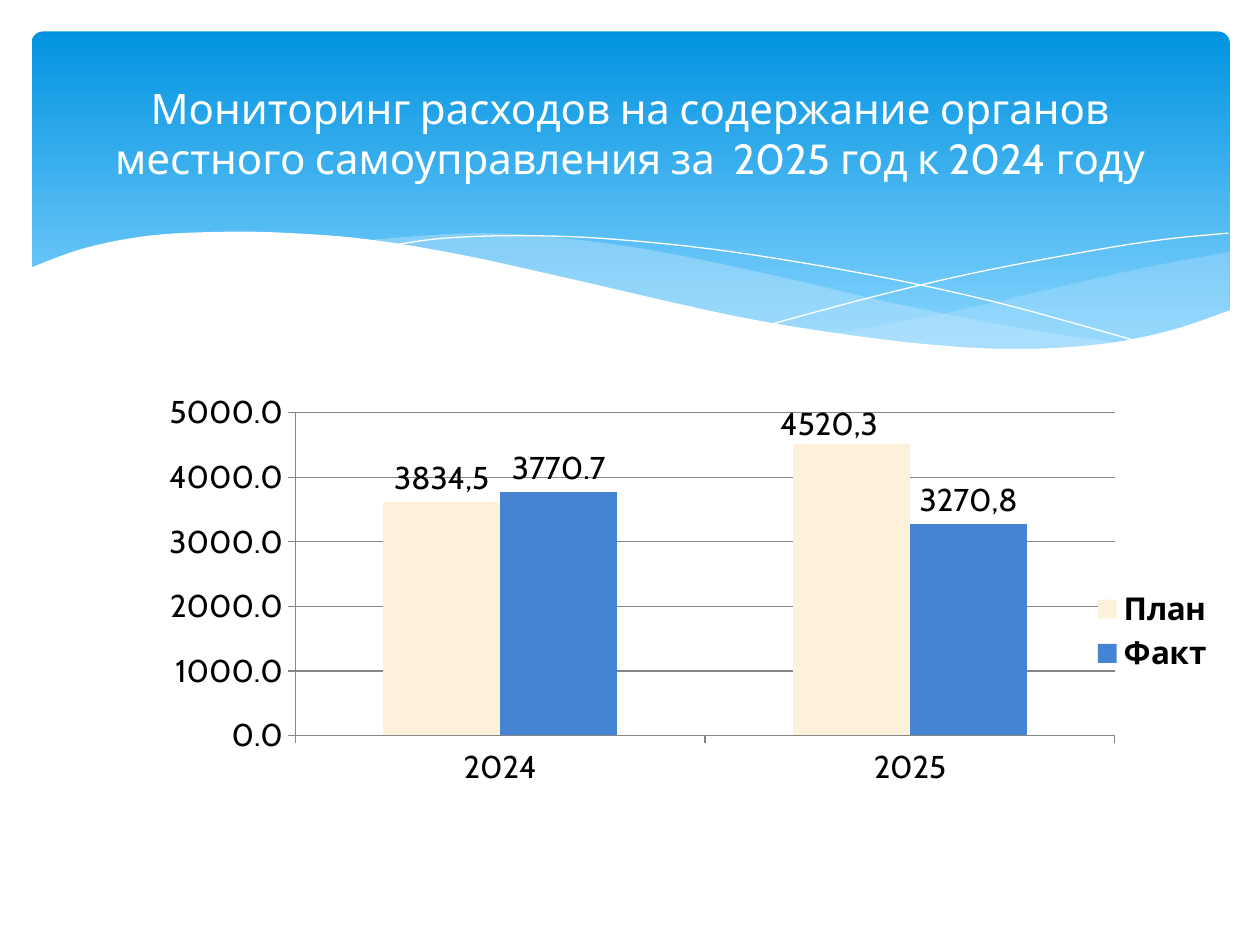
from dataclasses import dataclass

from pptx import Presentation
from pptx.chart.data import CategoryChartData
from pptx.dml.color import RGBColor
from pptx.enum.chart import (XL_CHART_TYPE, XL_LABEL_POSITION,
                             XL_LEGEND_POSITION, XL_TICK_MARK)
from pptx.enum.shapes import MSO_SHAPE
from pptx.enum.text import MSO_ANCHOR, PP_ALIGN
from pptx.oxml import parse_xml
from pptx.oxml.ns import nsdecls, qn
from pptx.util import Inches, Pt

COLUMN = XL_CHART_TYPE.COLUMN_CLUSTERED
RIGHT = XL_LEGEND_POSITION.RIGHT
ABOVE = XL_LABEL_POSITION.OUTSIDE_END
OUTSIDE = XL_TICK_MARK.OUTSIDE
NONE = XL_TICK_MARK.NONE
ROUND = MSO_SHAPE.ROUNDED_RECTANGLE
MIDDLE = MSO_ANCHOR.MIDDLE
CENTER = PP_ALIGN.CENTER


@dataclass
class Theme:
    font: str = "Cabin"
    white: str = "FFFFFF"
    black: str = "000000"
    sky: str = "0293E0"
    pale: str = "83D3FE"
    mist: str = "C6E7FC"
    plan: str = "FDF2D9"
    fact: str = "4584D3"
    grid: str = "868686"
    title: int = 24
    label: int = 18


def rgb(code):
    return RGBColor.from_string(code)


def style(font, name, size, color, bold=False):
    font.name, font.size, font.bold = name, Pt(size), bold
    font.color.rgb = rgb(color)


def write(frame, text, align=None, **form):
    frame.text = text
    line = frame.paragraphs[0]
    line.alignment = align
    style(line.runs[0].font, **form)


def smooth(knots, steps=6):
    """Catmull-Rom curve through the knots."""
    ends = [knots[0], *knots, knots[-1]]
    points = [knots[0]]
    for a, b, c, d in zip(ends, ends[1:], ends[2:], ends[3:]):
        for step in range(1, steps + 1):
            t = step / steps
            points.append(tuple(
                (2 * q + (r - p) * t + (2 * p - 5 * q + 4 * r - s) * t ** 2
                 + (3 * q - p - 3 * r + s) * t ** 3) / 2
                for p, q, r, s in zip(a, b, c, d)))
    return points


def layout(x, y, w=None, h=None):
    """Manual layout: an inner plot area, or an offset when no size is given."""
    parts = [("x", x), ("y", y)]
    if w:
        parts = [("layoutTarget", "inner"), ("xMode", "edge"),
                 ("yMode", "edge"), *parts, ("w", w), ("h", h)]
    body = "".join(f'<c:{tag} val="{val}"/>' for tag, val in parts)
    return parse_xml(f'<c:layout {nsdecls("c")}><c:manualLayout>{body}'
                     '</c:manualLayout></c:layout>')


class Deck:
    def __init__(self, theme):
        self.theme = theme
        self.file = Presentation()
        self.file.slide_width, self.file.slide_height = Inches(10), Inches(7.5)
        self.slide = self.file.slides.add_slide(self.file.slide_layouts[6])
        self.shapes = self.slide.shapes

    def panel(self, x, y, w, h, top, base):
        box = self.shapes.add_shape(
            ROUND, Inches(x), Inches(y), Inches(w), Inches(h))
        box.adjustments[0] = 0.034
        box.shadow.inherit = False
        box.line.fill.background()
        box.fill.gradient()
        box.fill.gradient_angle = 270
        for stop, code, place in zip(box.fill.gradient_stops,
                                     (top, base), (0, 0.9)):
            stop.color.rgb, stop.position = rgb(code), place

    def wave(self, *edges, fill=None, alpha=100):
        """Filled area between edges, or a hairline when fill is None."""
        points = [(Inches(x), Inches(y))
                  for edge in edges for x, y in smooth(edge)]
        path = self.shapes.build_freeform(*points[0])
        path.add_line_segments(points[1:], close=fill is not None)
        form = path.convert_to_shape()
        form.shadow.inherit = False
        if fill is None:
            form.fill.background()
            form.line.color.rgb, form.line.width = rgb(self.theme.white), Pt(0)
            return
        form.line.fill.background()
        form.fill.solid()
        form.fill.fore_color.rgb = rgb(fill)
        if alpha < 100:
            tint = form.fill._xPr.find(qn("a:solidFill"))[0]
            tint.append(parse_xml(
                f'<a:alpha {nsdecls("a")} val="{alpha * 1000}"/>'))

    def title(self, text, x, y, w, h):
        frame = self.shapes.add_textbox(
            Inches(x), Inches(y), Inches(w), Inches(h)).text_frame
        frame.word_wrap = True
        frame.vertical_anchor = MIDDLE
        write(frame, text, align=CENTER, name=self.theme.font,
              size=self.theme.title, color=self.theme.white)

    def chart(self, cats, rows, x, y, w, h, plot):
        theme = self.theme
        form = dict(name=theme.font, size=theme.label, color=theme.black)
        data = CategoryChartData(number_format="0.0")
        data.categories = cats
        for name, vals, *_ in rows:
            data.add_series(name, vals)
        chart = self.shapes.add_chart(
            COLUMN, Inches(x), Inches(y), Inches(w), Inches(h), data).chart
        style(chart.font, **form)
        chart.has_title = False
        chart.has_legend = True
        chart.legend.position = RIGHT
        chart.legend.include_in_layout = False
        style(chart.legend.font, bold=True, **form)

        # Axes and plot area
        for axis in (chart.category_axis, chart.value_axis):
            axis.major_tick_mark, axis.minor_tick_mark = OUTSIDE, NONE
            axis.format.line.color.rgb = rgb(theme.grid)
        scale = chart.value_axis
        scale.minimum_scale, scale.maximum_scale = 0, 5000
        scale.major_unit = 1000
        scale.tick_labels.number_format = "0.0"
        scale.tick_labels.number_format_is_linked = False
        scale.has_major_gridlines = True
        scale.major_gridlines.format.line.color.rgb = rgb(theme.grid)
        area = chart.plots[0]
        area.gap_width, area.overlap = 150, 0
        area.vary_by_categories = False
        space = chart.element.find(".//" + qn("c:plotArea"))
        for old in space.findall(qn("c:layout")):
            space.remove(old)
        space.insert(0, layout(*plot))

        # Bars and their labels
        for bars, (_, _, color, notes) in zip(area.series, rows):
            bars.format.fill.solid()
            bars.format.fill.fore_color.rgb = rgb(color)
            labels = bars.data_labels
            labels.show_value, labels.position = True, ABOVE
            labels.number_format = "0.0"
            labels.number_format_is_linked = False
            style(labels.font, **form)
            for spot, (text, shift) in notes.items():
                note = bars.points[spot].data_label
                write(note.text_frame, text, **form)
                note.position = ABOVE
                if shift:
                    mark = labels._element.find(qn("c:dLbl") + "[last()]")
                    mark.find(qn("c:idx")).addnext(layout(*shift))

    def save(self):
        self.file.save("out.pptx")


def main():
    theme = Theme()
    deck = Deck(theme)

    # Header with waves
    deck.panel(0.25, 0.25, 9.51, 2.7, theme.sky, theme.pale)
    deck.wave([(9.76, 2), (9.21, 2.1), (8.61, 2.23), (7.53, 2.48), (6.61, 2.65)],
              [(6.61, 2.65), (7.19, 2.72), (7.69, 2.77), (8.24, 2.77),
               (8.81, 2.73), (9.28, 2.63), (9.76, 2.47)],
              fill=theme.mist, alpha=29)
    deck.wave([(8.93, 2.73), (8.07, 2.6), (7.06, 2.4), (6.29, 2.22),
               (5.41, 2.03), (4.65, 1.91), (3.8, 1.85), (2.86, 1.91)],
              [(2.86, 1.91), (3.62, 2.03), (4.49, 2.22), (5.66, 2.48),
               (6.5, 2.64), (7.22, 2.74), (8.07, 2.78), (8.93, 2.73)],
              fill=theme.mist, alpha=40)
    deck.wave([(3.09, 1.95), (3.53, 1.89), (4.16, 1.87), (4.89, 1.9),
               (5.82, 2), (6.95, 2.19), (7.95, 2.41), (9.07, 2.72)])
    deck.wave([(6.13, 2.57), (6.95, 2.35), (7.76, 2.16), (8.66, 1.99),
               (9.24, 1.9), (9.75, 1.85)])
    deck.wave([(9.77, 2.46), (9.3, 2.62), (8.75, 2.73), (8.09, 2.77),
               (7.44, 2.74), (6.68, 2.65), (5.79, 2.5), (4.47, 2.2),
               (3.65, 2.02), (2.92, 1.9), (2.3, 1.85), (1.77, 1.84),
               (1.19, 1.87), (0.67, 1.97), (0.23, 2.13)],
              [(0.23, 3.29), (9.77, 3.29)], fill=theme.white)

    # Plan and fact by year
    deck.chart(["2024", "2025"],
               [("План", (3617.6, 4520.3), theme.plan,
                 {0: ("3834,5", None), 1: ("4520,3", (-0.02, 0.01))}),
                ("Факт", (3770.7, 3270.8), theme.fact,
                 {1: ("3270,8", None)})],
               0.83, 3.04, 8.91, 3.94, plot=(0.17, 0.06, 0.73, 0.65))

    # Title
    deck.title("Мониторинг расходов на содержание органов местного "
               "самоуправления за  2025 год к 2024 году", 0.5, 0.37, 9, 1.37)
    deck.save()


if __name__ == "__main__":
    main()
